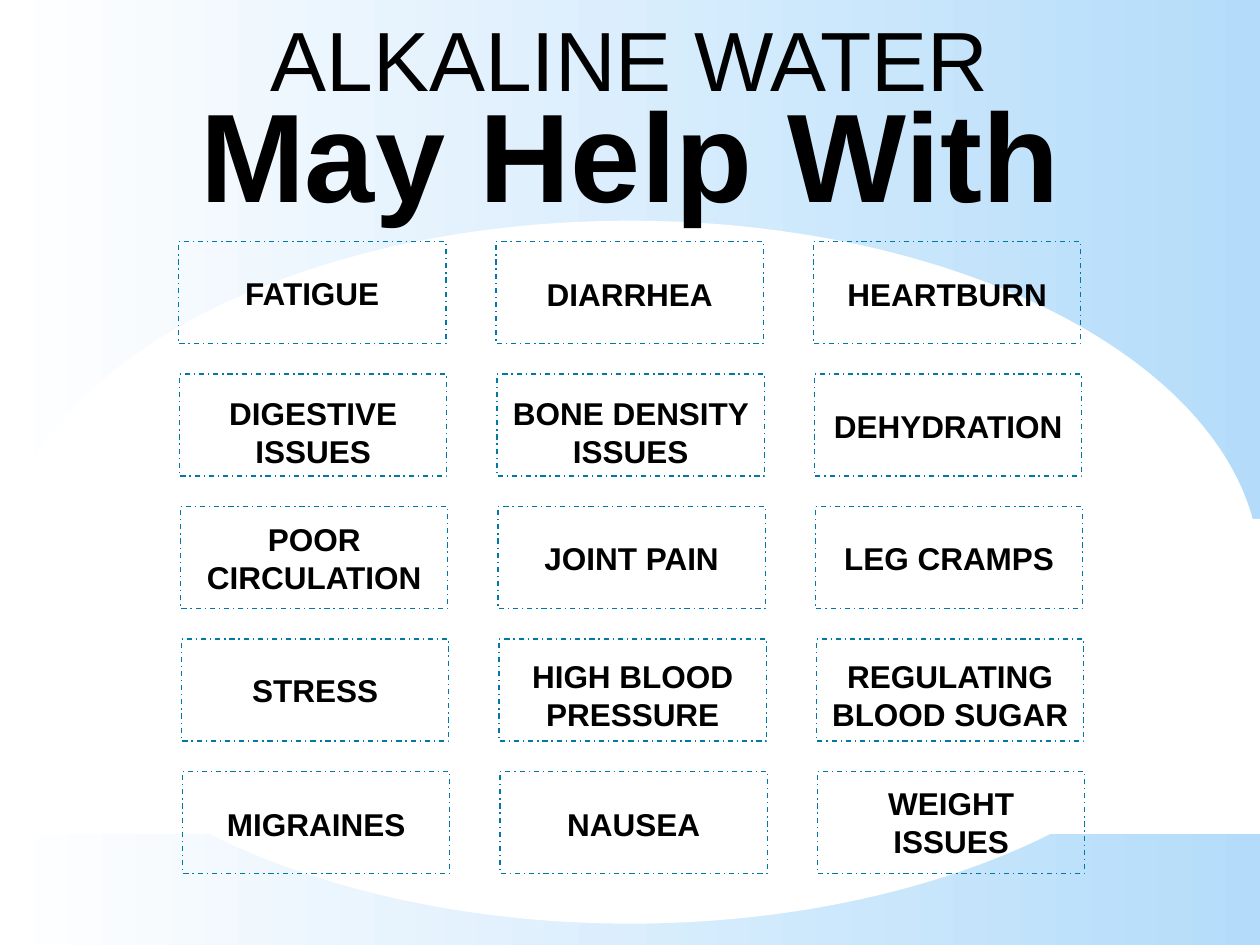
from dataclasses import dataclass

from pptx import Presentation
from pptx.dml.color import RGBColor
from pptx.enum.dml import MSO_LINE
from pptx.enum.shapes import MSO_SHAPE
from pptx.enum.text import MSO_ANCHOR, MSO_AUTO_SIZE, PP_ALIGN
from pptx.util import Cm, Pt


@dataclass(frozen=True)
class Theme:
    """Colours, font and type sizes of the deck."""
    font: str = "Arial"
    ink: str = "000000"
    white: str = "FFFFFF"
    sky: str = "B4DCFA"
    border: str = "0079A4"
    heading: int = 48
    headline: int = 72
    label: int = 18
    border_width: float = 0.75


@dataclass(frozen=True)
class Box:
    """A rectangle in centimetres."""
    left: float
    top: float
    width: float
    height: float

    def inner(self, left, top, width, height):
        """Return a box placed relative to this one."""
        return Box(self.left + left, self.top + top, width, height)

    def lengths(self):
        """Return the four lengths for python-pptx."""
        return [Cm(value) for value in (self.left, self.top, self.width, self.height)]


THEME = Theme()
PAGE = Box(0, 0, 25.4, 19.05)
SINGLE, DOUBLE = 1.02, 1.8
BENEFITS = [
    [("FATIGUE", 0.53, SINGLE), ("DIARRHEA", 0.55, SINGLE), ("HEARTBURN", 0.55, SINGLE)],
    [("DIGESTIVE ISSUES", 0.28, DOUBLE), ("BONE DENSITY ISSUES", 0.28, DOUBLE),
     ("DEHYDRATION", 0.55, SINGLE)],
    [("POOR CIRCULATION", 0.15, DOUBLE), ("JOINT PAIN", 0.53, SINGLE),
     ("LEG CRAMPS", 0.53, SINGLE)],
    [("STRESS", 0.53, SINGLE), ("HIGH BLOOD PRESSURE", 0.25, DOUBLE),
     ("REGULATING BLOOD SUGAR", 0.25, DOUBLE)],
    [("MIGRAINES", 0.56, SINGLE), ("NAUSEA", 0.56, SINGLE), ("WEIGHT ISSUES", 0.13, DOUBLE)],
]


def write_text(shape, text, size, bold=False, anchor=MSO_ANCHOR.TOP):
    """Write one centred paragraph into a shape."""
    frame = shape.text_frame
    frame.auto_size = MSO_AUTO_SIZE.NONE
    frame.word_wrap = True
    frame.vertical_anchor = anchor
    para = frame.paragraphs[0]
    para.alignment = PP_ALIGN.CENTER
    para.space_before = Pt(0)
    span = para.add_run()
    span.text = text
    span.font.name = THEME.font
    span.font.size = Pt(size)
    span.font.bold = bold
    span.font.color.rgb = RGBColor.from_string(THEME.ink)


def add_panel(page, box, kind=MSO_SHAPE.RECTANGLE):
    """Add a plain white shape without line or shadow."""
    panel = page.shapes.add_shape(kind, *box.lengths())
    panel.shadow.inherit = False
    panel.fill.solid()
    panel.fill.fore_color.rgb = RGBColor.from_string(THEME.white)
    panel.line.fill.background()
    return panel


def add_gradient_panel(page, box):
    """Add a panel that fades from white to sky blue."""
    fill = add_panel(page, box).fill
    fill.gradient()
    fill.gradient_angle = 0
    for stop, colour, position in zip(fill.gradient_stops, (THEME.white, THEME.sky), (0, 1)):
        stop.color.rgb = RGBColor.from_string(colour)
        stop.position = position


def add_backdrop(page, box):
    """Draw the blue bands, the white band and the white ellipse."""
    split = 14.17
    add_gradient_panel(page, box.inner(0, split, box.width, box.height - split))
    add_gradient_panel(page, box.inner(0, 0, box.width, split))
    add_panel(page, box.inner(0, 10.46, box.width, 6.35))
    add_panel(page, box.inner(0, 4.45, box.width, split), MSO_SHAPE.OVAL)


def add_headings(page, box):
    """Place the title and subtitle in front of the backdrop."""
    headings = (
        (page.shapes.title, "ALKALINE WATER", 0, THEME.heading, False),
        (page.placeholders[1], "May Help With", 1.91, THEME.headline, True),
    )
    for holder, text, top, size, bold in headings:
        place = box.inner(0, top, box.width, 3.18)
        holder.left, holder.top, holder.width, holder.height = place.lengths()
        write_text(holder, text, size, bold=bold, anchor=MSO_ANCHOR.MIDDLE)
        holder.element.getparent().append(holder.element)


def add_benefit(page, box, text, text_top, text_height):
    """Add one dashed frame and its label."""
    frame = add_panel(page, box)
    frame.fill.background()
    frame.line.color.rgb = RGBColor.from_string(THEME.border)
    frame.line.width = Pt(THEME.border_width)
    frame.line.dash_style = MSO_LINE.DASH_DOT
    label_box = box.inner(0, text_top, box.width, text_height)
    label = page.shapes.add_textbox(*label_box.lengths())
    write_text(label, text, THEME.label, bold=True)


def add_benefit_grid(page, box):
    """Lay out the benefits in rows that drift slightly to the right."""
    column_step, row_step, drift = 6.4, 2.67, 0.02
    for row, benefits in enumerate(BENEFITS):
        for column, benefit in enumerate(benefits):
            cell = box.inner(column * column_step + row * drift, row * row_step, 5.39, 2.06)
            add_benefit(page, cell, *benefit)


def main():
    """Build and save the deck."""
    deck = Presentation()
    deck.slide_width, deck.slide_height = Cm(PAGE.width), Cm(PAGE.height)
    page = deck.slides.add_slide(deck.slide_layouts[0])
    add_backdrop(page, PAGE)
    add_headings(page, PAGE.inner(0, -0.43, PAGE.width, 5.09))
    add_benefit_grid(page, PAGE.inner(3.6, 4.87, 18.27, 12.74))
    deck.save("out.pptx")


if __name__ == "__main__":
    main()
